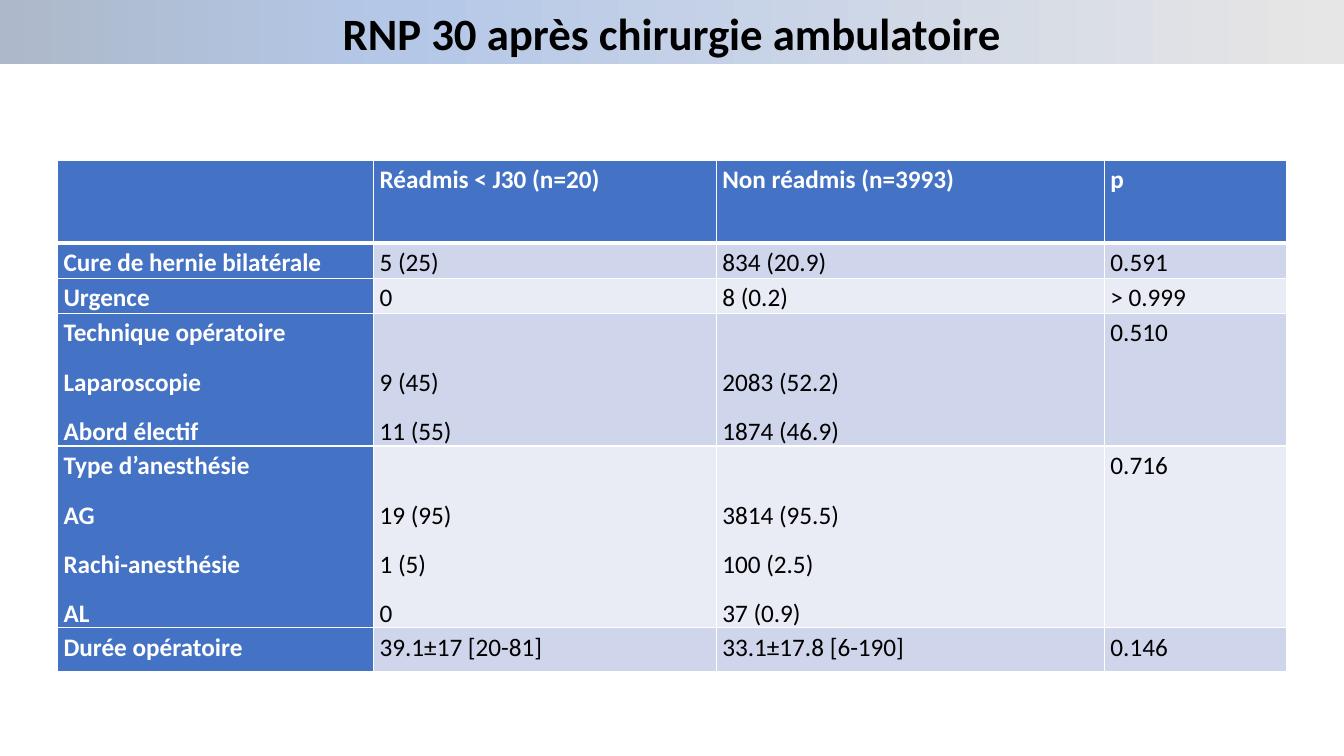
from copy import deepcopy
from dataclasses import dataclass

from lxml import etree
from pptx import Presentation
from pptx.dml.color import RGBColor
from pptx.enum.shapes import MSO_SHAPE
from pptx.enum.text import MSO_ANCHOR, MSO_AUTO_SIZE, PP_ALIGN
from pptx.oxml.ns import qn
from pptx.slide import Slide
from pptx.table import _Cell
from pptx.util import Pt

RECTANGLE = MSO_SHAPE.RECTANGLE
CENTER = PP_ALIGN.CENTER
LEFT = PP_ALIGN.LEFT
MIDDLE = MSO_ANCHOR.MIDDLE
TOP = MSO_ANCHOR.TOP
GROW = MSO_AUTO_SIZE.SHAPE_TO_FIT_TEXT

BLACK = RGBColor(0x00, 0x00, 0x00)
WHITE = RGBColor(0xFF, 0xFF, 0xFF)
BLUE = RGBColor(0x44, 0x72, 0xC4)
BAND_DARK = RGBColor(0xCF, 0xD5, 0xEA)
BAND_LIGHT = RGBColor(0xE9, 0xEB, 0xF5)
BANNER_STOPS = (
    (0, RGBColor(0xAD, 0xB9, 0xCA)),
    (0.29, RGBColor(0xB4, 0xC7, 0xE7)),
    (1, RGBColor(0xE7, 0xE6, 0xE6)),
)

FONT = "Calibri"
SLIDE_WIDTH = 960
SLIDE_HEIGHT = 540
LINE_PITCH = 35.25
COLUMN_WIDTHS = (225.8, 244.8, 277.2, 129.8)
CELL_MARGINS = {
    "margin_left": Pt(4.3),
    "margin_right": Pt(4.3),
    "margin_top": Pt(0),
    "margin_bottom": Pt(0),
    "vertical_anchor": TOP,
}
CELL_PARAGRAPH = {"alignment": LEFT, "line_spacing": 1.15, "space_after": Pt(10)}


@dataclass(frozen=True)
class TableRow:
    height: float
    label: str
    readmitted: str
    not_readmitted: str
    p_value: str
    grouped: bool = False

    @property
    def texts(self) -> tuple[str, ...]:
        return self.label, self.readmitted, self.not_readmitted, self.p_value


ROWS = (
    TableRow(59.25, "", "Réadmis < J30 (n=20)", "Non réadmis (n=3993)", "p"),
    TableRow(25, "Cure de hernie bilatérale", "5 (25)", "834 (20.9)", "0.591"),
    TableRow(25, "Urgence", "0", "8 (0.2)", "> 0.999"),
    TableRow(
        94,
        "Technique opératoire\nLaparoscopie\nAbord électif",
        "9 (45)\n11 (55)",
        "2083 (52.2)\n1874 (46.9)",
        "0.510",
        grouped=True,
    ),
    TableRow(
        129.5,
        "Type d’anesthésie\nAG\nRachi-anesthésie\nAL",
        "19 (95)\n1 (5)\n0",
        "3814 (95.5)\n100 (2.5)\n37 (0.9)",
        "0.716",
        grouped=True,
    ),
    TableRow(31.5, "Durée opératoire", "39.1±17 [20-81]", "33.1±17.8 [6-190]", "0.146"),
)


def apply_format(target: object, values: dict[str, object]) -> None:
    for name, value in values.items():
        setattr(target, name, value)


def write_text(text_frame, text: str, size: float, color: RGBColor, bold: bool,
               paragraph_format: dict[str, object]) -> None:
    text_frame.text = text
    for paragraph in text_frame.paragraphs:
        apply_format(paragraph, paragraph_format)
        apply_format(paragraph.font, {"name": FONT, "size": Pt(size), "bold": bold})
        paragraph.font.color.rgb = color
        for run in paragraph.runs:
            apply_format(run.font, {"name": FONT, "size": Pt(size), "bold": bold})
            run.font.color.rgb = color


def add_banner(slide: Slide) -> None:
    banner = slide.shapes.add_shape(RECTANGLE, 0, 0, Pt(SLIDE_WIDTH), Pt(46))
    banner.shadow.inherit = False
    banner.line.fill.background()
    banner.fill.gradient()
    banner.fill.gradient_angle = 0
    stop_list = banner._element.spPr.find(".//" + qn("a:gsLst"))
    stop_list.append(deepcopy(stop_list[0]))
    for stop, (position, color) in zip(banner.fill.gradient_stops, BANNER_STOPS):
        stop.position = position
        stop.color.rgb = color
    apply_format(
        banner.text_frame,
        {"word_wrap": True, "auto_size": GROW, "vertical_anchor": MIDDLE},
    )
    write_text(banner.text_frame, "RNP 30 après chirurgie ambulatoire", 32, BLACK, True,
               {"alignment": CENTER})


def set_borders(cell: _Cell, widths: dict[str, float]) -> None:
    properties = cell._tc.get_or_add_tcPr()
    for index, (side, width) in enumerate(widths.items()):
        border = etree.Element(qn("a:ln" + side), w=str(Pt(width)))
        fill = etree.SubElement(border, qn("a:solidFill"))
        etree.SubElement(fill, qn("a:srgbClr"), val=str(WHITE))
        properties.insert(index, border)


def fill_cell(cell: _Cell, row: TableRow, row_index: int, column_index: int) -> None:
    is_heading = row_index == 0 or column_index == 0
    band = BAND_DARK if row_index % 2 else BAND_LIGHT
    apply_format(cell, CELL_MARGINS)
    if row.grouped and column_index in (1, 2):
        cell.margin_top = Pt(LINE_PITCH)
    cell.fill.solid()
    cell.fill.fore_color.rgb = BLUE if is_heading else band
    write_text(cell.text_frame, row.texts[column_index], 18,
               WHITE if is_heading else BLACK, is_heading, CELL_PARAGRAPH)
    set_borders(cell, {
        "L": 1,
        "R": 1,
        "T": 3 if row_index == 1 else 1,
        "B": 3 if row_index == 0 else 1,
    })


def add_results_table(slide: Slide) -> None:
    frame = slide.shapes.add_table(
        len(ROWS), len(COLUMN_WIDTHS), Pt(41.1), Pt(114.5),
        Pt(sum(COLUMN_WIDTHS)), Pt(sum(row.height for row in ROWS)),
    )
    table = frame.table
    table.first_col = True
    for column, width in zip(table.columns, COLUMN_WIDTHS):
        column.width = Pt(width)
    for row_index, row in enumerate(ROWS):
        table.rows[row_index].height = Pt(row.height)
        for column_index in range(len(COLUMN_WIDTHS)):
            fill_cell(table.cell(row_index, column_index), row, row_index, column_index)


def main() -> None:
    presentation = Presentation()
    presentation.slide_width = Pt(SLIDE_WIDTH)
    presentation.slide_height = Pt(SLIDE_HEIGHT)
    slide = presentation.slides.add_slide(presentation.slide_layouts[6])
    add_banner(slide)
    add_results_table(slide)
    presentation.save("out.pptx")


if __name__ == "__main__":
    main()
